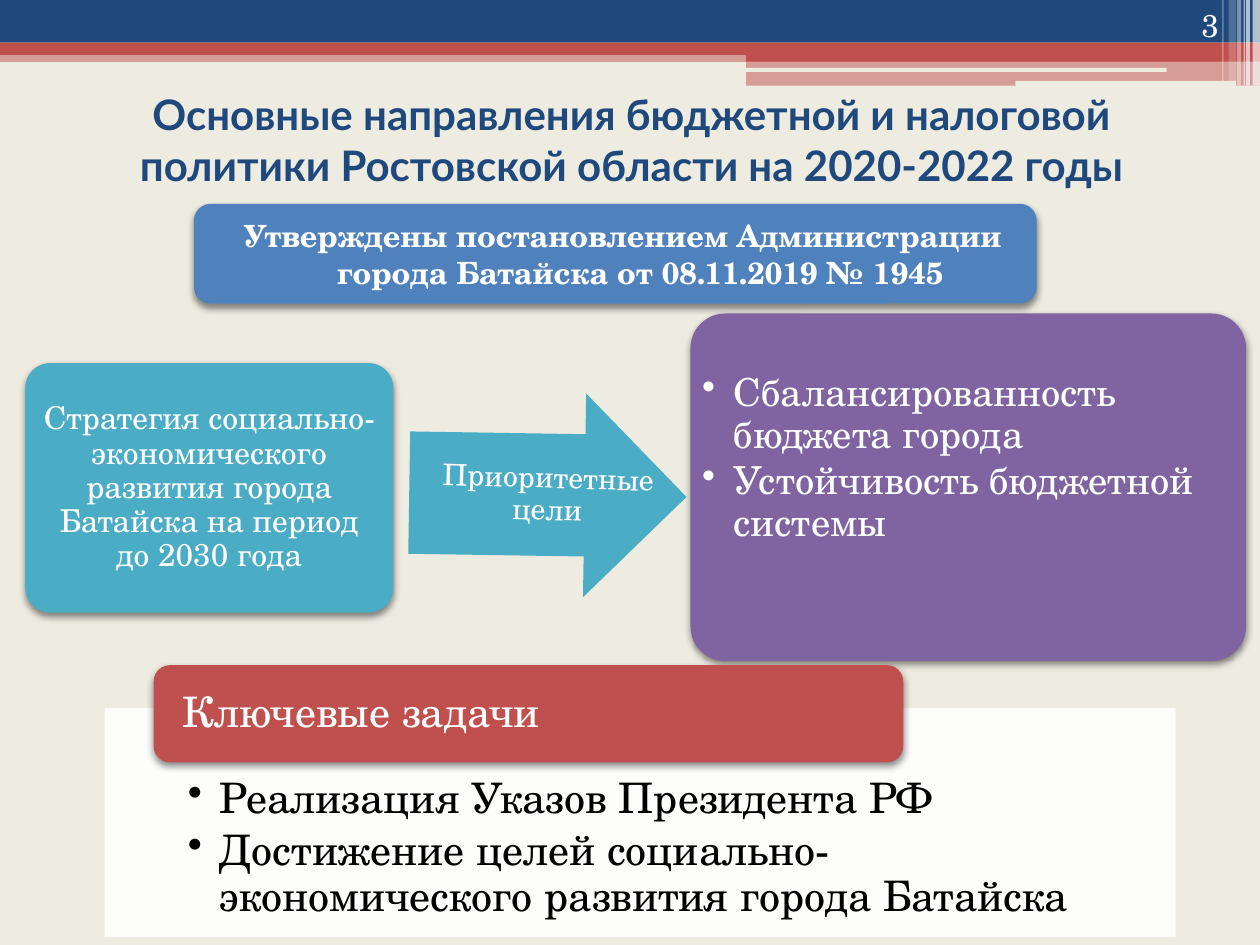
from pptx import Presentation
from pptx import util as u
from pptx.dml import color
from pptx.enum import shapes, text
from pptx.oxml import parse_xml
from pptx.oxml.ns import nsdecls, qn
from lxml import etree

SERIF, SANS = "TeX Gyre Schola", "Lato"
NAVY, RED, SAND, WHITE = "1F497D", "C0504D", "EEECE1", "FFFFFF"
BLUE, TEAL, VIOLET, BLACK = "4F81BD", "4BACC6", "8064A2", "000000"
RECT = shapes.MSO_SHAPE.RECTANGLE
ROUND = shapes.MSO_SHAPE.ROUNDED_RECTANGLE
ARROW = shapes.MSO_SHAPE.RIGHT_ARROW
LEFT, MID, RIGHT = text.PP_ALIGN.LEFT, text.PP_ALIGN.CENTER, text.PP_ALIGN.RIGHT
TOP, CENTRE = text.MSO_ANCHOR.TOP, text.MSO_ANCHOR.MIDDLE


def rgb(code):
    return color.RGBColor.from_string(code)


def cast(shape):
    """Give the shape a soft shadow below it."""
    shape._element.spPr.append(parse_xml(
        f'<a:effectLst {nsdecls("a")}><a:outerShdw blurRad="50800" dist="25400" '
        'dir="5400000" rotWithShape="0"><a:srgbClr val="000000">'
        '<a:alpha val="45000"/></a:srgbClr></a:outerShdw></a:effectLst>'))


def block(slide, box, fill, kind=RECT, alpha=100, shade=False):
    """Draw a filled shape without outline; box is in centimetres."""
    shape = slide.shapes.add_shape(kind, *map(u.Cm, box))
    shape.fill.solid()
    shape.fill.fore_color.rgb = rgb(fill)
    shape.line.fill.background()
    if alpha < 100:
        tone = shape._element.spPr.find(qn("a:solidFill"))[0]
        etree.SubElement(tone, qn("a:alpha")).set("val", str(alpha * 1000))
    if shade:
        cast(shape)
    else:
        shape.shadow.inherit = False
    return shape


def write(shape, lines, size, ink=WHITE, face=SERIF, bold=False, align=MID,
          anchor=CENTRE, pad=(0, 0, 0, 0), pitch=0.9, after=0, dent=None,
          dot=False):
    """Set paragraphs; a line feed in one becomes a line break."""
    frame = shape.text_frame
    frame.word_wrap = True
    frame.auto_size = text.MSO_AUTO_SIZE.NONE
    frame.vertical_anchor = anchor
    (frame.margin_left, frame.margin_top,
     frame.margin_right, frame.margin_bottom) = map(u.Cm, pad)
    for num, line in enumerate(lines):
        para = frame.add_paragraph() if num else frame.paragraphs[0]
        para.alignment = align
        para.line_spacing = pitch
        para.space_before = u.Pt(0)
        para.space_after = u.Pt(after)
        if dent:
            props = para._p.get_or_add_pPr()
            props.set("marL", str(u.Cm(dent[0])))
            props.set("indent", str(u.Cm(dent[1])))
            if dot:
                etree.SubElement(props, qn("a:buChar")).set("char", "•")
        for part, words in enumerate(line.split("\n")):
            if part:
                para.add_line_break()
            run = para.add_run()
            run.text = words
            font = run.font
            font.name, font.size, font.bold = face, u.Pt(size), bold
            font.color.rgb = rgb(ink)


def label(slide, box, lines, size, **style):
    area = slide.shapes.add_textbox(*map(u.Cm, box))
    write(area, lines, size, **style)
    return area


def header(slide, box):
    """Draw the bands, thin rules and edge strips, then the page number."""
    left, top, wide, _ = box
    half = wide - 15.04
    bands = [(0, 1.02, wide, 0.23, RED, 50), (0, 0, wide, 0.86, NAVY, 100),
             (0, 0.86, wide, 0.25, RED, 100), (15.04, 0.99, half, 0.25, RED, 100),
             (15.04, 1.22, half, 0.51, RED, 50)]
    for x, y, w, h, fill, alpha in bands:
        block(slide, (left + x, top + y, w, h), fill, alpha=alpha)
    for x, y, w, h in [(15.01, 1.37, 8.51, 0.08), (20.47, 1.63, 4.45, 0.1)]:
        block(slide, (left + x, top + y, w, h), SAND, ROUND)
    strips = [(0.15, 0.15, 1.73, 65), (0.28, 0.08, 1.73, 65),
              (0.33, 0.03, 1.73, 60), (0.46, 0.08, 1.73, 40),
              (0.63, 0.15, 1.63, 20), (0.76, 0.03, 1.63, 30)]
    for gap, w, h, alpha in strips:
        block(slide, (left + wide - gap, top, w, h), WHITE, alpha=alpha)
    label(slide, (left + wide - 2.69, top, 2.11, 1.02), ["3"], 18, align=RIGHT,
          anchor=text.MSO_ANCHOR.BOTTOM, pad=(0.25, 0.13, 0.25, 0.13), pitch=1)


def heading(slide, box):
    title = slide.shapes.title
    title.left, title.top, title.width, title.height = map(u.Cm, box)
    write(title, ["Основные направления бюджетной и налоговой политики "
                  "Ростовской области на 2020-2022 годы"], 24, NAVY, SANS, True,
          pad=(0.25, 0.13, 0.25, 0.13), pitch=1)


def banner(slide, box):
    card = block(slide, box, BLUE, ROUND, shade=True)
    write(card, ["Утверждены постановлением Администрации города Батайска "
                 "от 08.11.2019 № 1945"], 17.5, bold=True,
          pad=(0.25, 0.13, 0.25, 0.13), pitch=1, dent=(1.02, -0.71))


def flow(slide, box):
    """Strategy, arrow and goals, left to right."""
    left, top, wide, high = box
    card = block(slide, (left, top + 1, 7.42, 5.03), TEAL, ROUND, shade=True)
    card.adjustments[0] = 0.1
    write(card, ["Стратегия социально- экономического развития города "
                 "Батайска на период\nдо 2030 года"], 18, pad=(0.03,) * 4)

    spot = (left + 7.74, top + 1.6, 5.59, 4.11)
    arrow = block(slide, spot, TEAL, ARROW)
    arrow.adjustments[0], arrow.adjustments[1] = 0.6, 0.5
    arrow.rotation = 0.9
    label(slide, spot, ["Приоритетные цели"], 17).rotation = 1.8

    goals = block(slide, (left + wide - 11.2, top, 11.2, high), VIOLET, ROUND,
                  shade=True)
    goals.adjustments[0] = 0.1
    write(goals, ["Сбалансированность бюджета города",
                  "Устойчивость бюджетной системы"], 22, align=LEFT, anchor=TOP,
          pad=(0.03, 1, 0.03, 0.03), after=3, dent=(0.64, -0.64), dot=True)


def tasks(slide, box):
    left, top, wide, high = box
    panel = block(slide, (left, top + 0.86, wide, high - 0.86), WHITE, alpha=90)
    write(panel, ["Реализация Указов Президента РФ",
                  "Достижение целей социально-экономического развития "
                  "города Батайска"], 24, BLACK, align=LEFT, anchor=TOP,
          pad=(1.68, 1.4, 1.68, 0.48), after=4, dent=(0.64, -0.64), dot=True)
    tab = block(slide, (left + 0.99, top, 15.11, 1.96), RED, ROUND, shade=True)
    write(tab, ["Ключевые задачи"], 24, align=LEFT, pad=(0.48, 0, 0.48, 0))


def main():
    deck = Presentation()
    deck.slide_width, deck.slide_height = u.Cm(25.4), u.Cm(19.05)
    slide = deck.slides.add_slide(deck.slide_layouts[5])
    slide.background.fill.solid()
    slide.background.fill.fore_color.rgb = rgb(SAND)
    header(slide, (0, 0, 25.4, 1.73))
    heading(slide, (1.3, 1.32, 22.86, 2.97))
    banner(slide, (3.91, 4.11, 16.99, 2.01))
    flow(slide, (0.51, 6.32, 24.61, 7.01))
    tasks(slide, (2.11, 13.41, 21.59, 5.48))
    deck.save("out.pptx")


if __name__ == "__main__":
    main()
